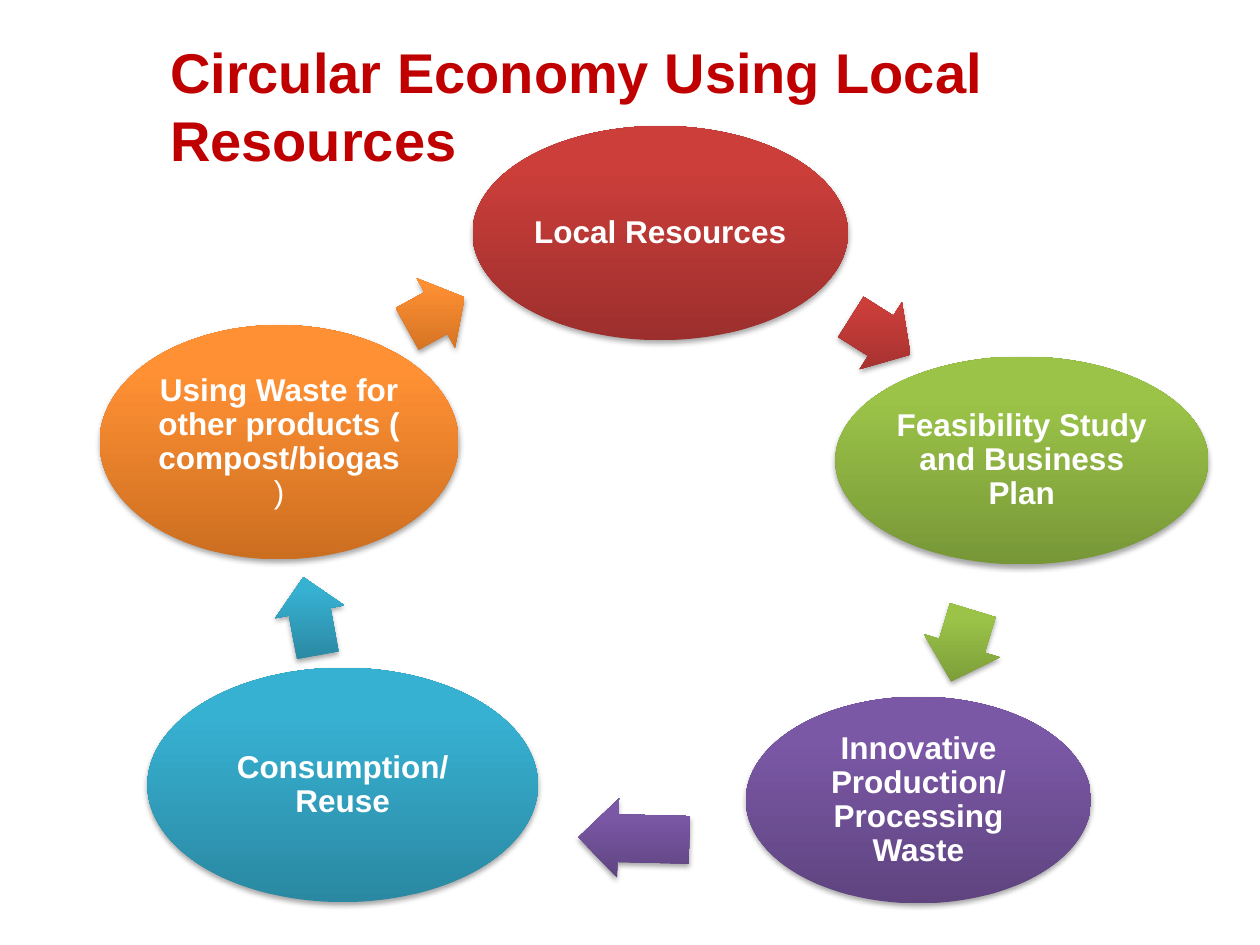
from dataclasses import dataclass

from lxml import etree
from pptx import Presentation
from pptx import util as u
from pptx.dml.color import RGBColor
from pptx.enum import shapes, text
from pptx.oxml.ns import qn


@dataclass(frozen=True)
class Theme:
    font: str = "Arial"
    title_size: int = 32
    stage_size: int = 18
    title_color: str = "C00000"
    stage_text: str = "FFFFFF"
    shadow: str = "000000"
    # (bottom, top) gradient colours
    red: tuple[str, str] = ("9C2F2D", "CB3E3A")
    green: tuple[str, str] = ("779737", "9BC348")
    purple: tuple[str, str] = ("5F4480", "7B58A6")
    blue: tuple[str, str] = ("2A88A2", "37B1D2")
    orange: tuple[str, str] = ("CC6E20", "FF9034")


@dataclass(frozen=True)
class Box:
    left: float
    top: float
    width: float
    height: float

    def emu(self) -> list[u.Length]:
        return [u.Inches(v) for v in (self.left, self.top, self.width, self.height)]


@dataclass(frozen=True)
class Stage:
    label: str
    colors: tuple[str, str]
    oval: Box
    arrow: Box
    turn: float
    plain_tail: str = ""


THEME = Theme()
TITLE = "Circular Economy Using Local Resources"
TITLE_BOX = Box(1.25, 0.25, 8.34, 0.64)

# The cycle, clockwise from the top; each arrow leads to the next stage
STAGES = [
    Stage("Local Resources", THEME.red,
          Box(3.75, 1, 2.98, 1.7), Box(6.71, 2.35, 0.56, 0.63), 32.3),
    Stage("Feasibility Study and Business Plan", THEME.green,
          Box(6.63, 2.83, 2.96, 1.65), Box(7.34, 4.81, 0.59, 0.63), 106.9),
    Stage("Innovative Production/ Processing Waste", THEME.purple,
          Box(5.92, 5.53, 2.74, 1.64), Box(4.59, 6.34, 0.88, 0.63), 181.4),
    Stage("Consumption/ Reuse", THEME.blue,
          Box(1.17, 5.3, 3.1, 1.86), Box(2.15, 4.61, 0.63, 0.56), 259.5),
    Stage("Using Waste for other products ( compost/biogas", THEME.orange,
          Box(0.79, 2.58, 2.85, 1.86), Box(3.2, 2.17, 0.52, 0.63), 331.2, ")"),
]


def set_font(font, size: int, color: str) -> None:
    font.name, font.size = THEME.font, u.Pt(size)
    font.color.rgb = RGBColor.from_string(color)


def add_shadow(sp) -> None:
    """Soft shadow falling straight down."""
    sp.shadow.inherit = False
    effects = sp._element.spPr.find(qn("a:effectLst"))
    shadow = etree.SubElement(effects, qn("a:outerShdw"), blurRad=str(u.Pt(3.1)),
                              dist=str(u.Pt(1.8)), dir="5400000", rotWithShape="0")
    color = etree.SubElement(shadow, qn("a:srgbClr"), val=THEME.shadow)
    etree.SubElement(color, qn("a:alpha"), val="35000")


def add_solid(s, kind, box: Box, colors: tuple[str, str], turn: float = 0):
    """Shape with an upright gradient, whatever its rotation."""
    sp = s.shapes.add_shape(kind, *box.emu())
    sp.rotation = turn
    sp.line.fill.background()
    sp.fill.gradient()
    sp.fill.gradient_angle = (90 + turn) % 360
    for stop, position, color in zip(sp.fill.gradient_stops, (0, 0.8), colors):
        stop.position = position
        stop.color.rgb = RGBColor.from_string(color)
    add_shadow(sp)
    return sp


def add_stage(s, stage: Stage) -> None:
    sp = add_solid(s, shapes.MSO_SHAPE.OVAL, stage.oval, stage.colors)
    tf = sp.text_frame
    tf.word_wrap = True
    tf.vertical_anchor = text.MSO_ANCHOR.MIDDLE
    tf.margin_left = tf.margin_right = tf.margin_top = tf.margin_bottom = u.Inches(0.03)
    p = tf.paragraphs[0]
    p.alignment = text.PP_ALIGN.CENTER
    p.line_spacing = 0.9
    for words, bold in ((stage.label, True), (stage.plain_tail, False)):
        if words:
            r = p.add_run()
            r.text = words
            set_font(r.font, THEME.stage_size, THEME.stage_text)
            r.font.bold = bold


def add_arrow(s, stage: Stage) -> None:
    sp = add_solid(s, shapes.MSO_SHAPE.RIGHT_ARROW, stage.arrow, stage.colors, stage.turn)
    sp.adjustments[0], sp.adjustments[1] = 0.6, 0.5


def add_title(s) -> None:
    sp = s.shapes.title
    sp.left, sp.top, sp.width, sp.height = TITLE_BOX.emu()
    tf = sp.text_frame
    tf.text = TITLE
    tf.word_wrap = True
    tf.auto_size = text.MSO_AUTO_SIZE.NONE
    tf.vertical_anchor = text.MSO_ANCHOR.TOP
    p = tf.paragraphs[0]
    p.alignment = text.PP_ALIGN.LEFT
    set_font(p.font, THEME.title_size, THEME.title_color)
    p.font.bold = True


def main() -> None:
    prs = Presentation()
    prs.slide_width, prs.slide_height = u.Inches(10), u.Inches(7.5)
    s = prs.slides.add_slide(prs.slide_layouts[5])  # title only
    add_title(s)
    for stage in STAGES:
        add_stage(s, stage)
        add_arrow(s, stage)
    prs.save("out.pptx")


if __name__ == "__main__":
    main()
